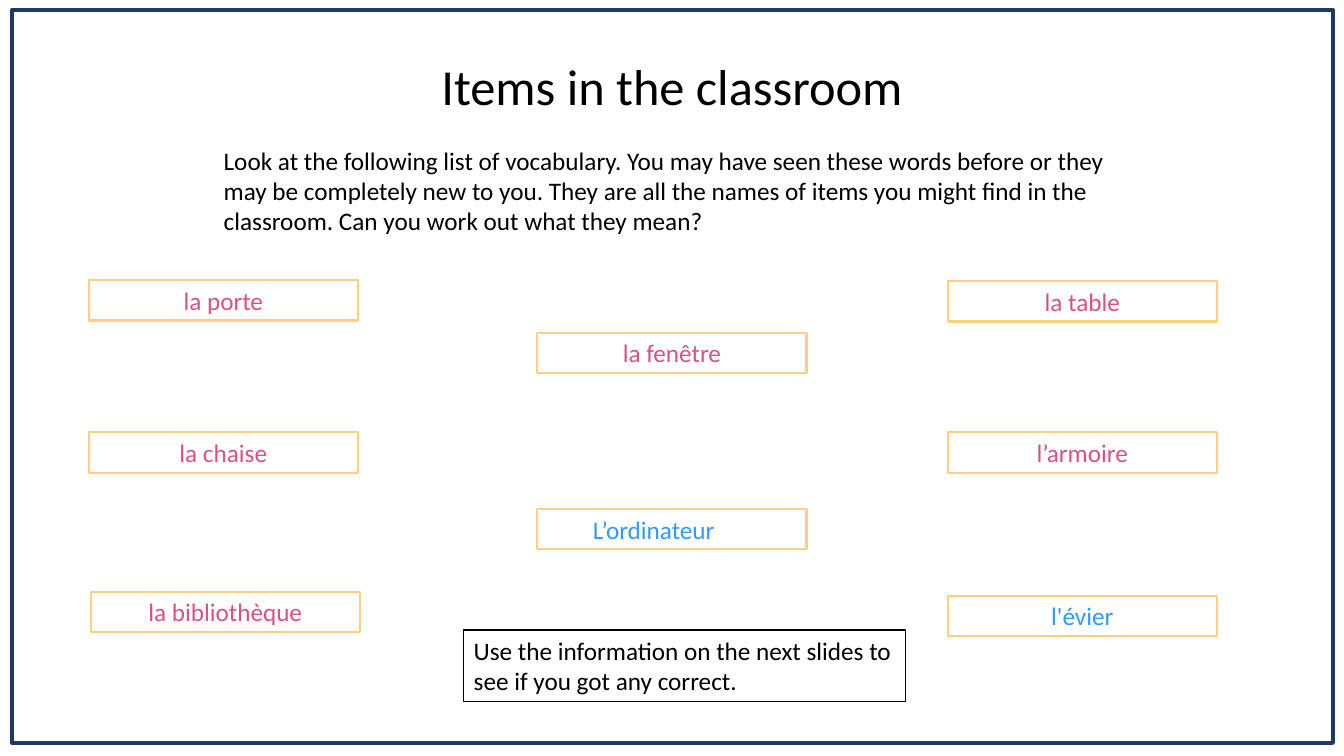
import pptx
import pptx.util
import pptx.dml.color
import pptx.enum.shapes
import pptx.enum.text

SLIDE_WIDTH, SLIDE_HEIGHT = 13.33, 7.5
NAVY, GOLD, PINK, BLUE, BLACK, WHITE = (
    "203864", "FDD080", "DB5183", "3399FF", "000000", "FFFFFF")
FEMININE, MASCULINE = PINK, BLUE

TITLE = "Items in the classroom"
INTRO = ("Look at the following list of vocabulary. You may have seen these words "
         "before or they may be completely new to you. They are all the names of items "
         "you might find in the classroom. Can you work out what they mean?")
HINT = "Use the information on the next slides to see if you got any correct."

# Each column: left edge, then (word, colour, top edge)
WORD_COLUMNS = [
    (0.88, [("la porte", FEMININE, 2.78), ("la chaise", FEMININE, 4.29),
            ("la bibliothèque", FEMININE, 5.87)]),
    (5.33, [("la fenêtre", FEMININE, 3.3), ("L’ordinateur", MASCULINE, 5.05)]),
    (9.4, [("la table", FEMININE, 2.79), ("l’armoire", FEMININE, 4.29),
           ("l'évier", MASCULINE, 5.91)]),
]
WORD_WIDTH, WORD_HEIGHT = 2.67, 0.4
NUDGED_LEFT = {"la bibliothèque": 0.02}
LEFT_INSET = {"L’ordinateur": 0.55}

ALIGN = pptx.enum.text.PP_ALIGN


def color(value):
    return pptx.dml.color.RGBColor.from_string(value)


def write(shape, text, size, ink, align=ALIGN.LEFT):
    frame = shape.text_frame
    frame.word_wrap = True
    frame.vertical_anchor = pptx.enum.text.MSO_ANCHOR.TOP
    frame.text = text
    para = frame.paragraphs[0]
    para.alignment = align
    font = para.runs[0].font
    font.name, font.size = "Calibri", pptx.util.Pt(size)
    font.color.rgb = color(ink)


def add_text(slide, area, text, size, align=ALIGN.LEFT):
    box = slide.shapes.add_textbox(*map(pptx.util.Inches, area))
    write(box, text, size, BLACK, align)


def add_box(slide, area, line, weight, fill=None):
    box = slide.shapes.add_shape(
        pptx.enum.shapes.MSO_SHAPE.RECTANGLE, *map(pptx.util.Inches, area))
    box.shadow.inherit = False
    if fill:
        box.fill.solid()
        box.fill.fore_color.rgb = color(fill)
    else:
        box.fill.background()
    box.line.color.rgb = color(line)
    box.line.width = pptx.util.Pt(weight)
    return box


def add_word(slide, word, ink, left, top):
    area = (left + NUDGED_LEFT.get(word, 0), top, WORD_WIDTH, WORD_HEIGHT)
    box = add_box(slide, area, GOLD, 1.5, WHITE)
    inset = LEFT_INSET.get(word)
    write(box, word, 18, ink, ALIGN.LEFT if inset else ALIGN.CENTER)
    if inset:
        box.text_frame.margin_left = pptx.util.Inches(inset)


def main():
    deck = pptx.Presentation()
    deck.slide_width = pptx.util.Inches(SLIDE_WIDTH)
    deck.slide_height = pptx.util.Inches(SLIDE_HEIGHT)
    slide = deck.slides.add_slide(deck.slide_layouts[6])

    add_text(slide, (4.28, 0.5, 5.97, 0.71), TITLE, 36)
    add_text(slide, (2.12, 1.39, 9.32, 1.01), INTRO, 18)
    for left, words in WORD_COLUMNS:
        for word, ink, top in words:
            add_word(slide, word, ink, left, top)
    hint = add_box(slide, (4.6, 6.25, 4.38, 0.71), BLACK, 0.75)
    write(hint, HINT, 18, BLACK)
    add_box(slide, (0.12, 0.1, 13.1, 7.27), NAVY, 3)

    deck.save("out.pptx")


if __name__ == "__main__":
    main()
